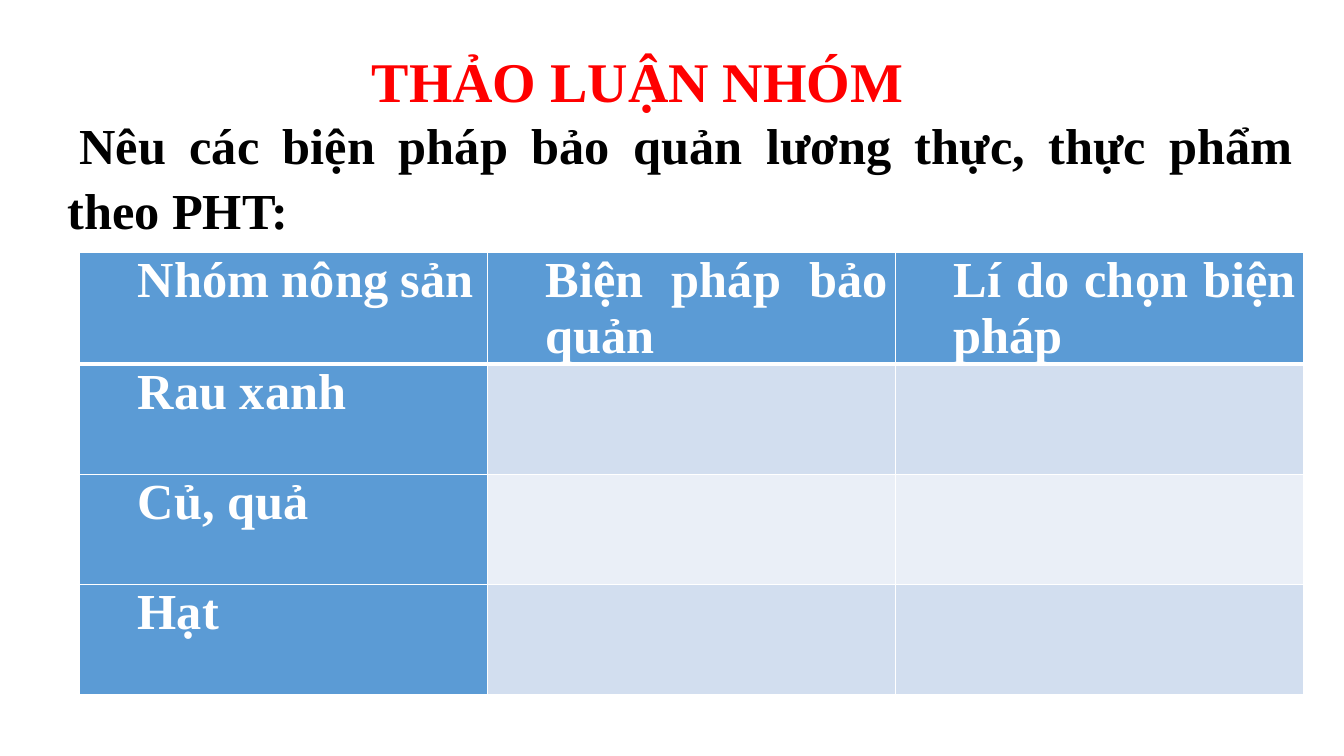
from pptx import Presentation
from pptx.dml.color import RGBColor
from pptx.enum.text import MSO_ANCHOR, MSO_AUTO_SIZE, PP_ALIGN
from pptx.oxml import parse_xml
from pptx.oxml.ns import nsdecls
from pptx.util import Pt

WHITE = RGBColor(0xFF, 0xFF, 0xFF)
BLACK = RGBColor(0, 0, 0)
RED = RGBColor(0xFF, 0, 0)
BLUE = RGBColor(0x5B, 0x9B, 0xD5)
BANDS = [RGBColor(0xEA, 0xEF, 0xF7), RGBColor(0xD2, 0xDE, 0xEF)]

ROWS = [
    ["Nhóm nông sản", "Biện pháp bảo quản", "Lí do chọn biện pháp"],
    ["Rau xanh", "", ""],
    ["Củ, quả", "", ""],
    ["Hạt", "", ""],
]


class SlideBuilder:
    font = "Times New Roman"

    def __init__(self, slide):
        self.slide = slide

    def style(self, p, size, color, margin=0, indent=0):
        p.alignment = PP_ALIGN.JUSTIFY
        p.font.name = self.font
        p.font.size = Pt(size)
        p.font.bold = True
        p.font.color.rgb = color
        pPr = p._p.get_or_add_pPr()
        pPr.set("marL", str(Pt(margin)))
        pPr.set("indent", str(Pt(indent)))

    def text(self, text, box, size, color, anchor=MSO_ANCHOR.TOP, wrap=True, indent=0):
        sp = self.slide.shapes.add_textbox(*map(Pt, box))
        tf = sp.text_frame
        tf.word_wrap = wrap
        tf.auto_size = MSO_AUTO_SIZE.SHAPE_TO_FIT_TEXT
        tf.vertical_anchor = anchor
        p = tf.paragraphs[0]
        p.text = text
        p.line_spacing = 1.07
        self.style(p, size, color, indent=indent)

    def borders(self, cell, widths):
        tcPr = cell._tc.get_or_add_tcPr()
        for i, (side, width) in enumerate(widths.items()):
            tcPr.insert(i, parse_xml(
                f'<a:{side} {nsdecls("a")} w="{Pt(width)}"><a:solidFill>'
                f'<a:srgbClr val="{WHITE}"/></a:solidFill></a:{side}>'))

    def table(self, rows, left, top, col_width, row_height, size):
        n_rows, n_cols = len(rows), len(rows[0])
        table = self.slide.shapes.add_table(
            n_rows, n_cols, Pt(left), Pt(top),
            Pt(col_width * n_cols), Pt(row_height * n_rows)).table
        table.first_col = True
        for col in table.columns:
            col.width = Pt(col_width)
        for i, row in enumerate(rows):
            table.rows[i].height = Pt(row_height)
            for j, text in enumerate(row):
                cell = table.cell(i, j)
                cell.margin_left = cell.margin_right = Pt(5.4)
                cell.margin_top = cell.margin_bottom = 0
                cell.fill.solid()
                cell.fill.fore_color.rgb = BLUE if i == 0 or j == 0 else BANDS[i % 2]
                self.borders(cell, {"lnL": 1, "lnR": 1, "lnT": 3 if i == 1 else 1,
                                    "lnB": 3 if i == 0 else 1})
                if text:
                    p = cell.text_frame.paragraphs[0]
                    p.text = text
                    self.style(p, size, WHITE, margin=36)


def main():
    prs = Presentation()
    prs.slide_width, prs.slide_height = Pt(960), Pt(540)
    s = SlideBuilder(prs.slides.add_slide(prs.slide_layouts[6]))
    s.table(ROWS, 57, 180.5, 291.4, 78.6, 36)
    s.text("Nêu các biện pháp bảo quản lương thực, thực phẩm theo PHT:",
           (41, 77.8, 890, 94.3), 36, BLACK, anchor=MSO_ANCHOR.MIDDLE, indent=8.64)
    s.text("THẢO LUẬN NHÓM", (258.5, 26.6, 398.2, 56.9), 40, RED, wrap=False)
    prs.save("out.pptx")


if __name__ == "__main__":
    main()
